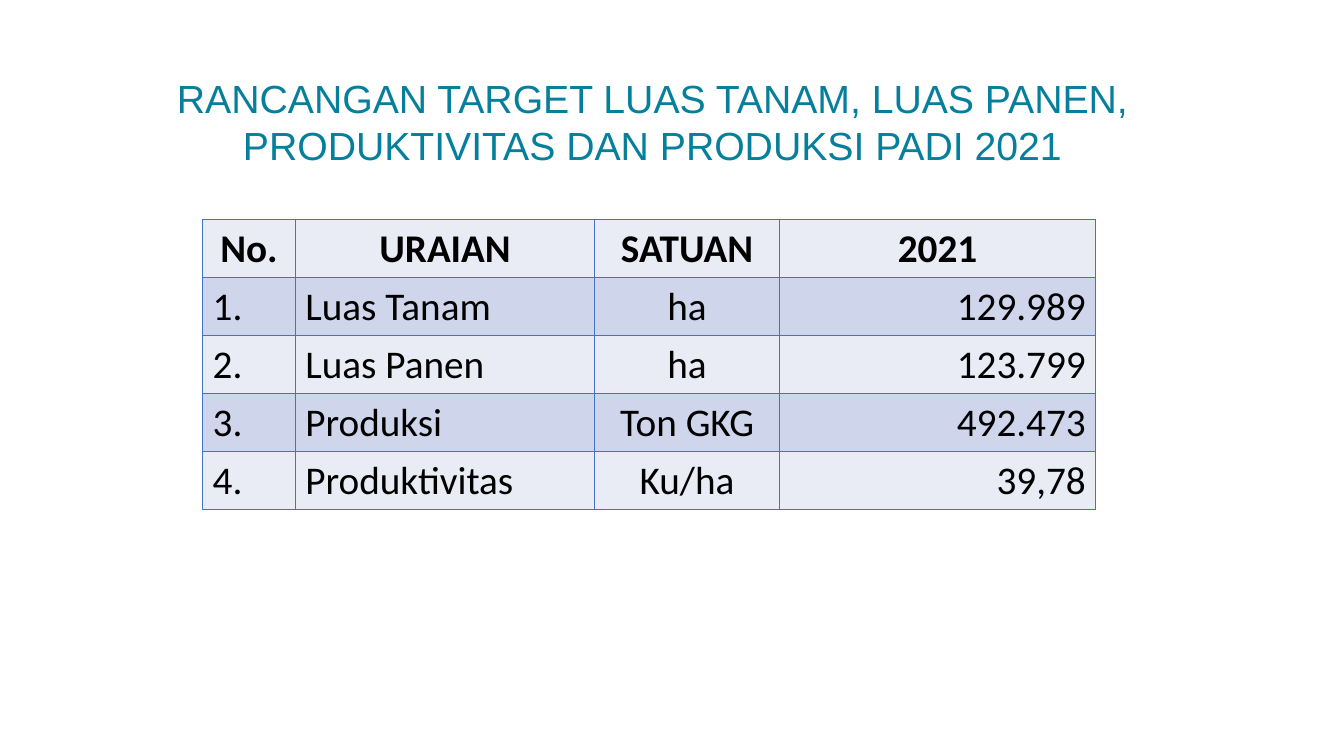
from lxml import etree
from pptx import Presentation
from pptx.dml.color import RGBColor
from pptx.enum.text import MSO_ANCHOR, MSO_AUTO_SIZE, PP_ALIGN
from pptx.oxml.ns import qn
from pptx.util import Inches, Pt

LEFT, CENTER, RIGHT = PP_ALIGN.LEFT, PP_ALIGN.CENTER, PP_ALIGN.RIGHT
MIDDLE = MSO_ANCHOR.MIDDLE
NO_AUTOFIT = MSO_AUTO_SIZE.NONE

BORDER_COLOR = "4472C4"
BAND_COLORS = ["E9EBF5", "CFD5EA"]
COLUMN_WIDTHS = [0.92, 2.97, 1.83, 3.14]
COLUMN_ALIGNMENTS = [LEFT, LEFT, CENTER, RIGHT]
ROW_HEIGHT = 0.57
ROWS = [
    ["No.", "URAIAN", "SATUAN", "2021"],
    ["1.", "Luas Tanam", "ha", "129.989"],
    ["2.", "Luas Panen", "ha", "123.799"],
    ["3.", "Produksi", "Ton GKG", "492.473"],
    ["4.", "Produktivitas", "Ku/ha", "39,78"],
]


def add_text(text_frame, text, font_name, color, alignment, bold=False):
    paragraph = text_frame.paragraphs[0]
    paragraph.alignment = alignment
    run = paragraph.add_run()
    run.text = text
    run.font.name = font_name
    run.font.size = Pt(28)
    run.font.bold = bold
    run.font.color.rgb = RGBColor.from_string(color)


def add_borders(cell):
    properties = cell._tc.get_or_add_tcPr()
    for position, side in enumerate(["a:lnL", "a:lnR", "a:lnT", "a:lnB"]):
        line = etree.Element(qn(side), w=str(Pt(1)))
        fill = etree.SubElement(line, qn("a:solidFill"))
        etree.SubElement(fill, qn("a:srgbClr"), val=BORDER_COLOR)
        properties.insert(position, line)


presentation = Presentation()
presentation.slide_width = Inches(13.33)
presentation.slide_height = Inches(7.5)
slide = presentation.slides.add_slide(presentation.slide_layouts[5])

# Title
title = slide.shapes.title
title.left, title.top = Inches(1.45), Inches(0.68)
title.width, title.height = Inches(10.04), Inches(1.05)
title.text_frame.word_wrap = True
title.text_frame.auto_size = NO_AUTOFIT
title.text_frame.vertical_anchor = MIDDLE
add_text(
    title.text_frame,
    "RANCANGAN TARGET LUAS TANAM, LUAS PANEN, PRODUKTIVITAS DAN PRODUKSI PADI 2021",
    "Arial", "067F9C", CENTER,
)

# Table of rice targets
table = slide.shapes.add_table(
    len(ROWS), len(COLUMN_WIDTHS), Inches(2.01), Inches(2.18),
    Inches(sum(COLUMN_WIDTHS)), Inches(ROW_HEIGHT * len(ROWS)),
).table
for column, width in zip(table.columns, COLUMN_WIDTHS):
    column.width = Inches(width)

for row_index, values in enumerate(ROWS):
    table.rows[row_index].height = Inches(ROW_HEIGHT)
    is_header = row_index == 0
    for column_index, value in enumerate(values):
        cell = table.cell(row_index, column_index)
        cell.fill.solid()
        cell.fill.fore_color.rgb = RGBColor.from_string(BAND_COLORS[row_index % 2])
        add_borders(cell)
        alignment = CENTER if is_header else COLUMN_ALIGNMENTS[column_index]
        add_text(cell.text_frame, value, "Calibri", "000000", alignment, is_header)

presentation.save("out.pptx")
